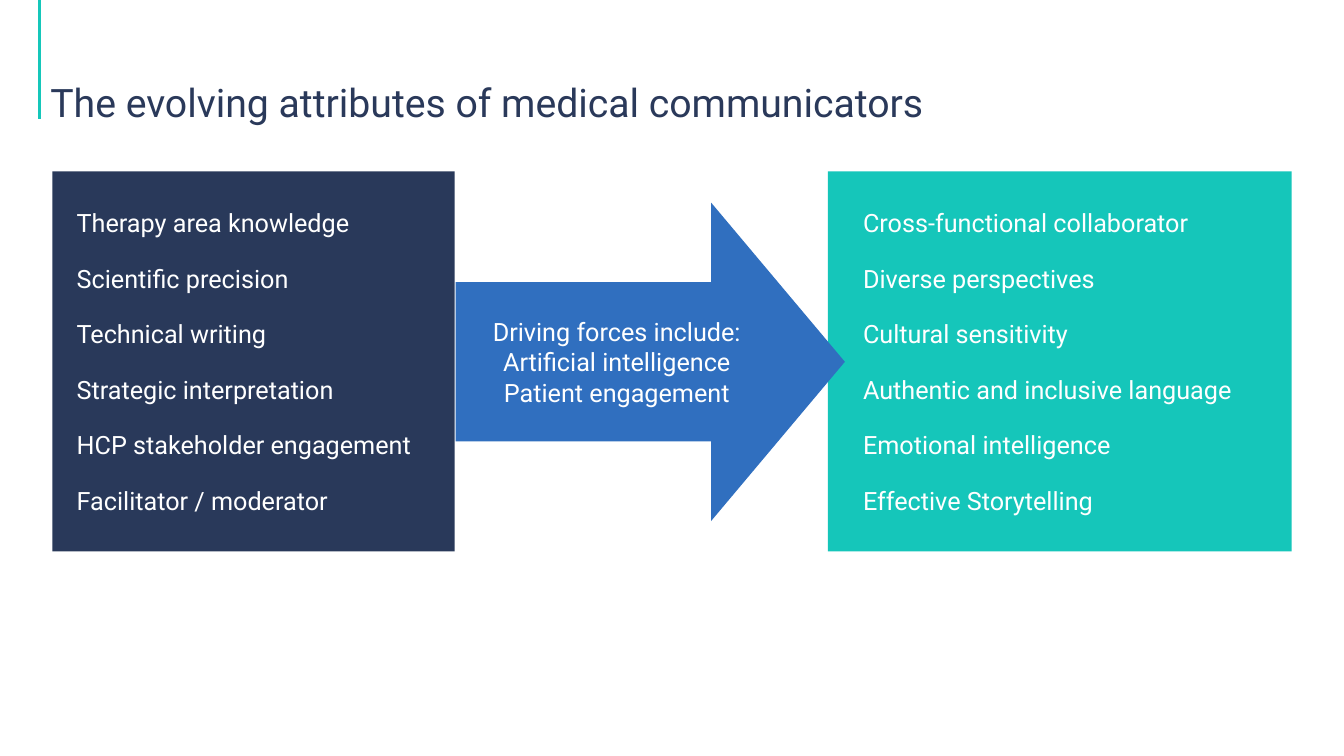
from dataclasses import dataclass

from lxml import etree
from pptx import Presentation
from pptx import util as u
from pptx.dml.color import RGBColor
from pptx.enum import shapes, text
from pptx.oxml.ns import qn


@dataclass(frozen=True)
class Theme:
    """Colours, font and type sizes of the slide."""

    font: str = "Roboto"
    title_size: int = 28
    body_size: int = 18
    title: str = "2A395A"
    navy: str = "29395A"
    teal: str = "15C6BA"
    accent: str = "15C7BA"
    blue: str = "306FBF"
    white: str = "FFFFFF"


class SlideBuilder:
    """Draws styled elements on the current slide."""

    def __init__(self, slide, theme):
        """Keep the slide and its theme."""
        self.slide = slide
        self.theme = theme

    def place(self, shape, left, top, width, height):
        """Move and size a shape, in inches."""
        shape.left, shape.top = u.Inches(left), u.Inches(top)
        shape.width, shape.height = u.Inches(width), u.Inches(height)

    def paint(self, shape, colour):
        """Fill a shape with a plain colour and no outline."""
        shape.fill.solid()
        shape.fill.fore_color.rgb = RGBColor.from_string(colour)
        shape.line.fill.background()

    def add_text(self, shape, lines, size, colour, insets, anchor, align, after=0, spacing=1.0):
        """Add one unbulleted paragraph for each line."""
        frame = shape.text_frame
        frame.word_wrap = True
        frame.auto_size = text.MSO_AUTO_SIZE.NONE
        frame.vertical_anchor = anchor
        (frame.margin_left, frame.margin_top,
         frame.margin_right, frame.margin_bottom) = map(u.Inches, insets)
        for index, line in enumerate(lines):
            paragraph = frame.add_paragraph() if index else frame.paragraphs[0]
            properties = paragraph._p.get_or_add_pPr()
            properties.set("marL", "0")
            properties.set("indent", "0")
            etree.SubElement(properties, qn("a:buNone"))
            paragraph.alignment = align
            paragraph.line_spacing = spacing
            paragraph.space_before = u.Pt(0)
            paragraph.space_after = u.Pt(after)
            run = paragraph.add_run()
            run.text = line
            run.font.name = self.theme.font
            run.font.size = u.Pt(size)
            run.font.color.rgb = RGBColor.from_string(colour)

    def title(self, line, *box):
        """Fill the title placeholder."""
        shape = self.slide.shapes.title
        self.place(shape, *box)
        self.add_text(shape, [line], self.theme.title_size, self.theme.title, (0, 0, 0, 0),
                      text.MSO_ANCHOR.BOTTOM, text.PP_ALIGN.LEFT, spacing=0.9)

    def panel(self, index, lines, colour, inset, *box):
        """Turn a body placeholder into a coloured list panel."""
        shape = self.slide.placeholders[index]
        self.place(shape, *box)
        self.paint(shape, colour)
        self.add_text(shape, lines, self.theme.body_size, self.theme.white,
                      (inset, 0.08, 0.24, 0.08), text.MSO_ANCHOR.MIDDLE,
                      text.PP_ALIGN.LEFT, after=18)

    def arrow(self, lines, colour, *box):
        """Add a right arrow with centred text."""
        shape = self.slide.shapes.add_shape(
            shapes.MSO_SHAPE.RIGHT_ARROW, *map(u.Inches, box))
        shape.shadow.inherit = False
        shape.adjustments[0], shape.adjustments[1] = 0.5, 0.42
        self.paint(shape, colour)
        self.add_text(shape, lines, self.theme.body_size, self.theme.white,
                      (0.24, 0.08, 0.24, 0.08), text.MSO_ANCHOR.MIDDLE, text.PP_ALIGN.CENTER)

    def line(self, colour, width, *ends):
        """Add a straight line between two points."""
        connector = self.slide.shapes.add_connector(
            shapes.MSO_CONNECTOR.STRAIGHT, *map(u.Inches, ends))
        connector.line.color.rgb = RGBColor.from_string(colour)
        connector.line.width = u.Pt(width)
        etree.SubElement(connector._element.spPr, qn("a:effectLst"))


def main():
    """Build and save the slide."""
    presentation = Presentation()
    presentation.slide_width = u.Inches(13.33)
    presentation.slide_height = u.Inches(7.5)
    theme = Theme()
    slide = presentation.slides.add_slide(presentation.slide_layouts.get_by_name("Two Content"))
    builder = SlideBuilder(slide, theme)

    builder.line(theme.accent, 2.25, 0.39, 0, 0.39, 1.18)
    builder.title("The evolving attributes of medical communicators", 0.5, 0.4, 12.11, 0.85)

    panel_top, panel_height = 1.7, 3.77
    established = ["Therapy area knowledge", "Scientific precision", "Technical writing",
                   "Strategic interpretation", "HCP stakeholder engagement",
                   "Facilitator / moderator"]
    emerging = ["Cross-functional collaborator", "Diverse perspectives", "Cultural sensitivity",
                "Authentic and inclusive language", "Emotional intelligence",
                "Effective Storytelling"]
    builder.panel(1, established, theme.navy, 0.24, 0.52, panel_top, 3.99, panel_height)
    builder.panel(2, emerging, theme.teal, 0.35, 8.21, panel_top, 4.6, panel_height)

    forces = ["Driving forces include:", "Artificial intelligence", "Patient engagement"]
    builder.arrow(forces, theme.blue, 4.52, 2.01, 3.86, 3.16)

    presentation.save("out.pptx")


if __name__ == "__main__":
    main()
